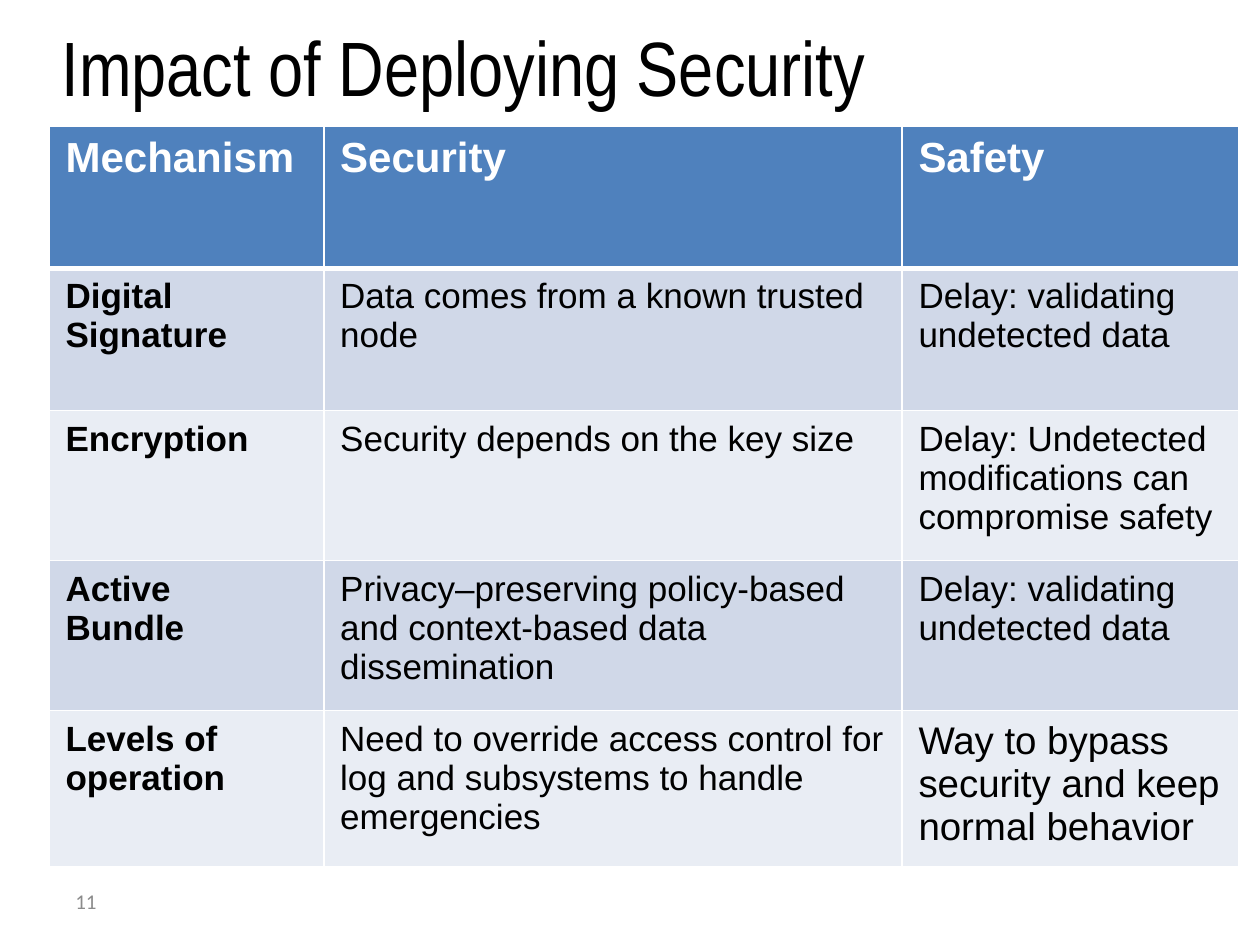
from lxml.etree import SubElement
from pptx import Presentation
from pptx.dml.color import RGBColor as Rgb
from pptx.enum.text import MSO_ANCHOR as Anchor
from pptx.oxml.ns import qn
from pptx.util import Inches, Pt

COLORS = {
    "ink": "000000",
    "white": "FFFFFF",
    "header": "4F81BD",
    "odd_row": "D0D8E8",
    "even_row": "E9EDF4",
    "page_number": "8B8B8B",
}

MECHANISMS = [
    ("Mechanism", "Security", "Safety"),
    ("Digital Signature", "Data comes from a known trusted node",
     "Delay: validating undetected data"),
    ("Encryption", "Security depends on the key size",
     "Delay: Undetected modifications can compromise safety"),
    ("Active\nBundle",
     "Privacy–preserving policy-based and context-based data dissemination",
     "Delay: validating undetected data"),
    ("Levels of operation",
     "Need to override access control for log and subsystems to handle emergencies",
     "Way to bypass security and keep normal behavior"),
]
COLUMN_WIDTHS = (2.18, 4.59, 2.67)
ROW_HEIGHTS = (1.13, 1.13, 1.19, 1.19, 1.19)
FINAL_CELL = (4, 2)


class SlideBuilder:
    def __init__(self, slide):
        self.slide = slide

    def add_runs(self, frame, text, font, size, color, bold=False):
        paragraph = frame.paragraphs[0]
        for index, line in enumerate(text.split("\n")):
            if index:
                paragraph.add_line_break()
            run = paragraph.add_run()
            run.text = line
            run.font.name = font
            run.font.size = Pt(size)
            run.font.bold = bold
            run.font.color.rgb = Rgb.from_string(COLORS[color])

    def text(self, box, text, font, size, color, anchor=Anchor.TOP):
        frame = self.slide.shapes.add_textbox(*map(Inches, box)).text_frame
        frame.word_wrap = True
        frame.vertical_anchor = anchor
        self.add_runs(frame, text, font, size, color)

    def border(self, cell, side, width):
        line = SubElement(cell._tc.get_or_add_tcPr(), qn(f"a:ln{side}"), w=str(Pt(width)))
        fill = SubElement(line, qn("a:solidFill"))
        SubElement(fill, qn("a:srgbClr"), val=COLORS["white"])

    def cell(self, cell, text, row, column):
        is_header = row == 0
        cell.margin_left = cell.margin_right = Inches(0.13)
        cell.margin_top = cell.margin_bottom = Inches(0.07)
        for side in "LRTB":
            thick = (row == 0 and side == "B") or (row == 1 and side == "T")
            self.border(cell, side, 3 if thick else 1)
        band = "header" if is_header else "odd_row" if row % 2 else "even_row"
        cell.fill.solid()
        cell.fill.fore_color.rgb = Rgb.from_string(COLORS[band])
        size = 24 if is_header else 22 if (row, column) == FINAL_CELL else 20
        self.add_runs(cell.text_frame, text, "Arial", size,
                      "white" if is_header else "ink", is_header or column == 0)

    def table(self, left, top, rows, widths, heights):
        table = self.slide.shapes.add_table(
            len(rows), len(widths), Inches(left), Inches(top),
            Inches(sum(widths)), Inches(sum(heights))).table
        for column, width in zip(table.columns, widths):
            column.width = Inches(width)
        for row, height in zip(table.rows, heights):
            row.height = Inches(height)
        for r, texts in enumerate(rows):
            for c, text in enumerate(texts):
                self.cell(table.cell(r, c), text, r, c)


def main():
    deck = Presentation()
    deck.slide_width, deck.slide_height = Inches(10), Inches(7.5)
    builder = SlideBuilder(deck.slides.add_slide(deck.slide_layouts[6]))
    builder.text((0.39, 0.11, 9, 0.8), "Impact of Deploying Security",
                 "Arial Narrow", 44, "ink")
    builder.text((0.5, 6.95, 2.33, 0.4), "11", "Calibri", 12, "page_number", Anchor.MIDDLE)
    builder.table(0.39, 1, MECHANISMS, COLUMN_WIDTHS, ROW_HEIGHTS)
    deck.save("out.pptx")


if __name__ == "__main__":
    main()
